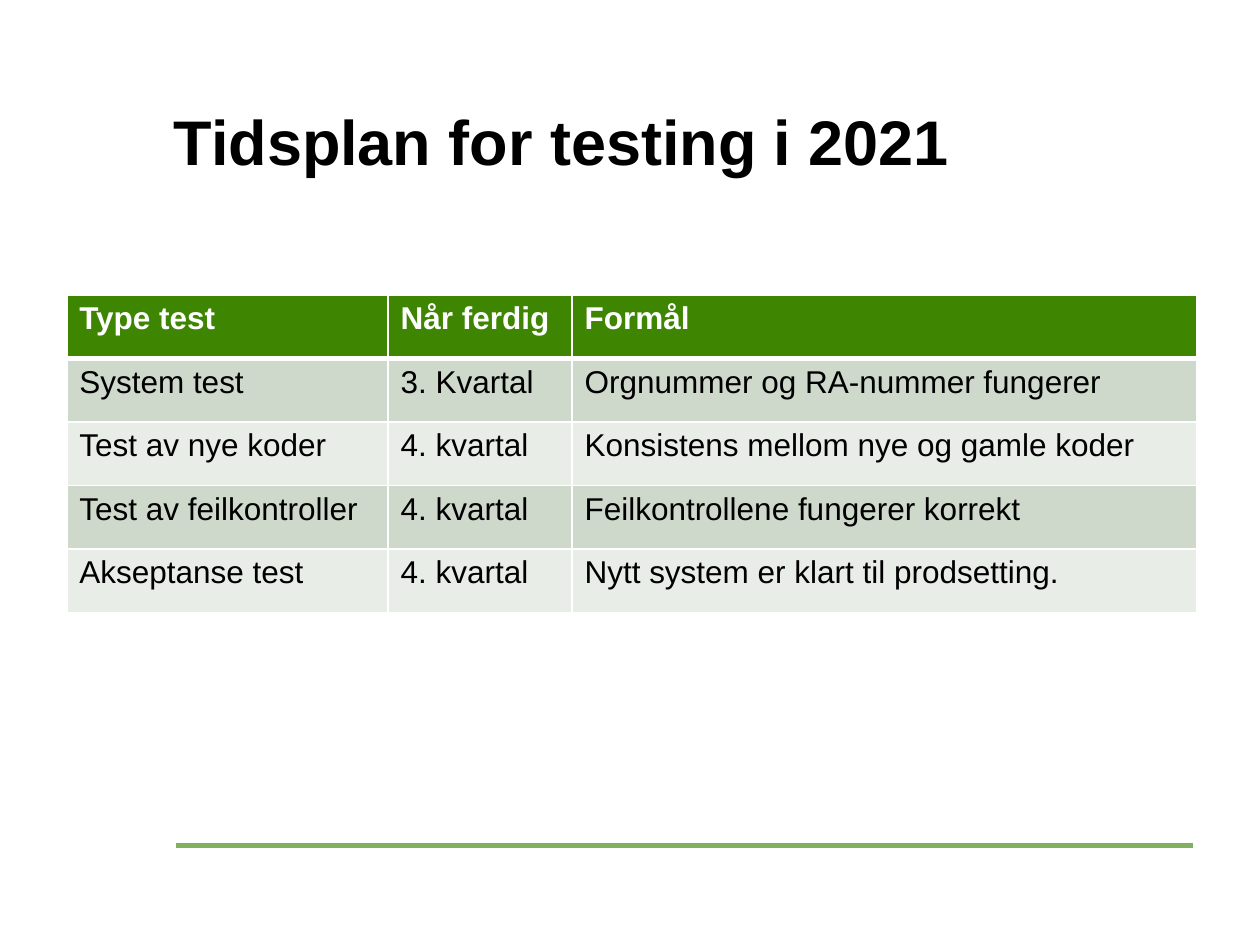
from dataclasses import dataclass
from lxml.etree import SubElement
from pptx import Presentation
from pptx.dml.color import RGBColor
from pptx.enum.shapes import MSO_CONNECTOR
from pptx.enum.text import MSO_ANCHOR
from pptx.oxml.ns import qn
from pptx.util import Inches, Pt


@dataclass(frozen=True)
class Theme:
    font: str = "Arial"
    ink: str = "000000"
    white: str = "FFFFFF"
    head: str = "3E8601"
    bands: tuple = ("CED9CC", "E8EDE7")
    rule: str = "82B061"
    title: int = 36
    body: int = 18
    thin: int = 1
    thick: int = 3


THEME = Theme()
COLS, ROWS = 1000, 750  # fine grid over the slide

PLAN = [
    ("Type test", "Når ferdig", "Formål"),
    ("System test", "3. Kvartal", "Orgnummer og RA-nummer fungerer"),
    ("Test av nye koder", "4. kvartal", "Konsistens mellom nye og gamle koder"),
    ("Test av feilkontroller", "4. kvartal", "Feilkontrollene fungerer korrekt"),
    ("Akseptanse test", "4. kvartal", "Nytt system er klart til prodsetting."),
]


def grid(*cells):
    """Turn grid steps into slide lengths."""
    return [Inches(10) * cell // COLS for cell in cells]


def write(frame, text, size=THEME.body, color=THEME.ink, bold=False):
    para = frame.paragraphs[0]
    run = para.add_run()
    run.text = text
    font = run.font
    font.name, font.size, font.bold = THEME.font, Pt(size), bold
    font.color.rgb = RGBColor.from_string(color)


def add_title(slide, text, *box):
    frame = slide.shapes.add_textbox(*grid(*box)).text_frame
    frame.word_wrap = True
    frame.vertical_anchor = MSO_ANCHOR.BOTTOM
    frame.margin_left = frame.margin_right = frame.margin_top = 0
    frame.margin_bottom = Inches(0.05)
    write(frame, text, size=THEME.title, bold=True)


def add_rule(slide, *ends):
    line = slide.shapes.add_connector(MSO_CONNECTOR.STRAIGHT, *grid(*ends))
    line.line.color.rgb = RGBColor.from_string(THEME.rule)
    line.line.width = Pt(THEME.thick)
    SubElement(line._element.spPr, qn("a:effectLst"))


def edge(cell, side, width):
    props = cell._tc.get_or_add_tcPr()
    line = SubElement(props, qn(f"a:ln{side}"), w=str(Pt(width)))
    fill = SubElement(line, qn("a:solidFill"))
    SubElement(fill, qn("a:srgbClr"), val=THEME.white)


def style(cell, row):
    # Borders come before the fill in the cell's properties
    heavy = {(0, "B"), (1, "T")}
    for side in "LRTB":
        edge(cell, side, THEME.thick if (row, side) in heavy else THEME.thin)
    cell.fill.solid()
    tint = THEME.bands[(row - 1) % 2] if row else THEME.head
    cell.fill.fore_color.rgb = RGBColor.from_string(tint)


def add_plan(slide, data, left, top, widths, height):
    box = grid(left, top, sum(widths), height)
    table = slide.shapes.add_table(len(data), len(widths), *box).table
    for col, width in zip(table.columns, grid(*widths)):
        col.width = width
    for row, texts in enumerate(data):
        for col, text in enumerate(texts):
            cell = table.cell(row, col)
            style(cell, row)
            color = THEME.ink if row else THEME.white
            write(cell.text_frame, text, color=color, bold=row == 0)


def main():
    deck = Presentation()
    deck.slide_width, deck.slide_height = grid(COLS, ROWS)
    slide = deck.slides.add_slide(deck.slide_layouts[6])

    # Footer rule
    add_rule(slide, 140, 671, 947, 671)
    # Heading
    add_title(slide, "Tidsplan for testing i 2021", 138, 21, 812, 125)
    # Test schedule
    add_plan(slide, PLAN, 53, 234, (255, 146, 496), 252)

    deck.save("out.pptx")


if __name__ == "__main__":
    main()
